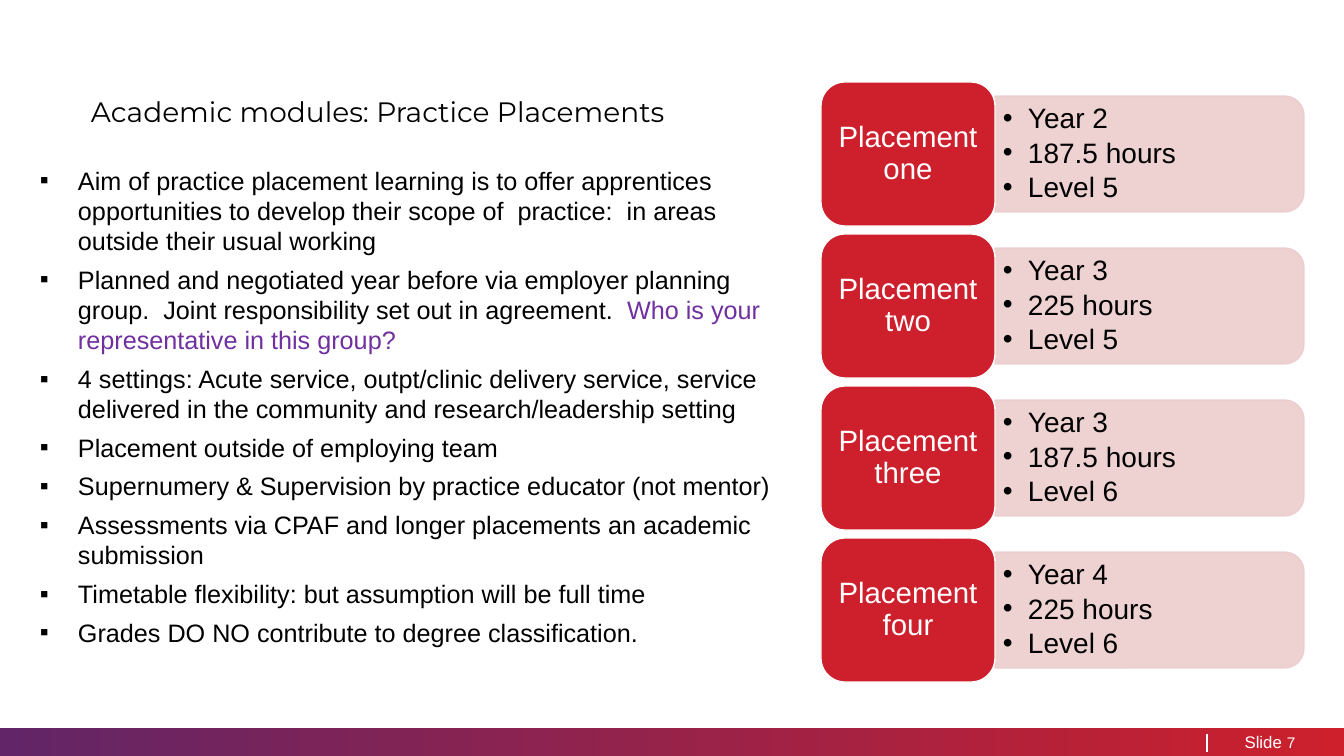
from collections import namedtuple
from dataclasses import dataclass

from lxml import etree
from pptx import Presentation
from pptx.dml.color import RGBColor
from pptx.enum.shapes import MSO_CONNECTOR, MSO_SHAPE
from pptx.enum.text import MSO_ANCHOR, MSO_AUTO_SIZE, PP_ALIGN
from pptx.oxml.ns import qn
from pptx.util import Pt

EMU_PER_PX = 914400 / 100.8
TITLE_ONLY = 5
STRAIGHT = MSO_CONNECTOR.STRAIGHT
RECTANGLE = MSO_SHAPE.RECTANGLE
ROUNDED = MSO_SHAPE.ROUNDED_RECTANGLE
ROUNDED_TOP = MSO_SHAPE.ROUND_2_SAME_RECTANGLE
TOP, MIDDLE = MSO_ANCHOR.TOP, MSO_ANCHOR.MIDDLE
LEFT, CENTER, RIGHT = PP_ALIGN.LEFT, PP_ALIGN.CENTER, PP_ALIGN.RIGHT
NO_AUTOFIT = MSO_AUTO_SIZE.NONE

Box = namedtuple("Box", "left top width height")


@dataclass(frozen=True)
class Theme:
    """Colours, fonts and type sizes of the slide."""
    purple: str = "622567"
    red: str = "CD202C"
    pink: str = "EDCDCD"
    question: str = "7030A0"
    black: str = "000000"
    white: str = "FFFFFF"
    title_font: str = "Montserrat"
    font: str = "Arial"
    title_size: int = 20
    body_size: int = 18
    detail_size: int = 20
    card_size: int = 21
    footer_size: int = 12
    number_size: int = 11


THEME = Theme()
TITLE = "Academic modules: Practice Placements"
POINTS = [
    ["Aim of practice placement learning is to offer apprentices opportunities to develop "
     "their scope of  practice:  in areas outside their usual working"],
    ["Planned and negotiated year before via employer planning group.  Joint responsibility "
     "set out in agreement.  ", "Who is your representative in this group?"],
    ["4 settings: Acute service, outpt/clinic delivery service, service delivered in the "
     "community and research/leadership setting"],
    ["Placement outside of employing team"],
    ["Supernumery & Supervision by practice educator (not mentor)"],
    ["Assessments via CPAF and longer placements an academic submission"],
    ["Timetable flexibility: but assumption will be full time"],
    ["Grades DO NO contribute to degree classification."],
]
PLACEMENTS = [
    ("Placement one", ["Year 2", "187.5 hours", "Level 5"]),
    ("Placement two", ["Year 3", "225 hours", "Level 5"]),
    ("Placement three", ["Year 3", "187.5 hours", "Level 6"]),
    ("Placement four", ["Year 4", "225 hours", "Level 6"]),
]


def px(length):
    """Turn pixels into EMU."""
    return round(length * EMU_PER_PX)


def emu(box):
    """Turn a pixel box into EMU lengths."""
    return [px(length) for length in box]


def apply(target, values):
    """Set attributes of an object from a dict."""
    for name, value in values.items():
        setattr(target, name, value)


def format_frame(frame, anchor=TOP, across=0, down=0):
    """Set wrapping, anchor and pixel margins of a text frame."""
    apply(frame, {"word_wrap": True, "auto_size": NO_AUTOFIT, "vertical_anchor": anchor,
                  "margin_left": px(across), "margin_right": px(across),
                  "margin_top": px(down), "margin_bottom": px(down)})


def add_run(paragraph, text, size, color, font=THEME.font):
    """Add one formatted run to a paragraph."""
    run = paragraph.add_run()
    run.text = text
    apply(run.font, {"size": Pt(size), "name": font, "bold": False})
    run.font.color.rgb = RGBColor.from_string(color)


def add_bullet(paragraph, character, indent):
    """Give a paragraph a hanging bullet."""
    properties = paragraph._p.get_or_add_pPr()
    properties.set("marL", str(px(indent)))
    properties.set("indent", str(-px(indent)))
    etree.SubElement(properties, qn("a:buFont")).set("typeface", THEME.font)
    etree.SubElement(properties, qn("a:buChar")).set("char", character)


def add_bullet_list(slide, box, items, character, indent, size, spacing, **frame_format):
    """Add a bulleted text box; the second run of an item takes the question colour."""
    frame = slide.shapes.add_textbox(*emu(box)).text_frame
    format_frame(frame, **frame_format)
    for index, runs in enumerate(items):
        paragraph = frame.add_paragraph() if index else frame.paragraphs[0]
        add_bullet(paragraph, character, indent)
        apply(paragraph, spacing)
        for text, color in zip(runs, (THEME.black, THEME.question)):
            add_run(paragraph, text, size, color)


def add_plain_shape(slide, kind, box, fill, line=None):
    """Add a shadowless shape with a solid fill and an optional thin line."""
    shape = slide.shapes.add_shape(kind, *emu(box))
    shape.shadow.inherit = False
    shape.fill.solid()
    shape.fill.fore_color.rgb = RGBColor.from_string(fill)
    if line:
        shape.line.color.rgb = RGBColor.from_string(line)
        shape.line.width = Pt(1)
    else:
        shape.line.fill.background()
    return shape


def add_title(slide, box):
    """Place and format the title placeholder."""
    title = slide.shapes.title
    apply(title, dict(zip(box._fields, emu(box))))
    format_frame(title.text_frame)
    paragraph = title.text_frame.paragraphs[0]
    apply(paragraph, {"alignment": LEFT, "line_spacing": 1.1})
    add_run(paragraph, TITLE, THEME.title_size, THEME.black, THEME.title_font)


def add_placement(slide, box, name, details):
    """Add one row: a pink detail panel beside a red name card."""
    card_width, panel_height, inset = 174, 116, 6
    panel_width = box.width - card_width
    panel_left = box.left + card_width
    middle = box.top + box.height / 2
    panel = add_plain_shape(
        slide, ROUNDED_TOP,
        Box(panel_left + (panel_width - panel_height) / 2, middle - panel_width / 2,
            panel_height, panel_width), THEME.pink, THEME.pink)
    panel.rotation = 90
    for color in panel._element.spPr.iter(qn("a:srgbClr")):
        etree.SubElement(color, qn("a:alpha")).set("val", "90000")

    text_box = Box(panel_left, middle - panel_height / 2 + 5, panel_width - 6, panel_height - 10)
    add_bullet_list(slide, text_box, [[detail] for detail in details], "•", 25,
                    THEME.detail_size, {"line_spacing": 0.9, "space_after": Pt(3)},
                    anchor=MIDDLE, across=8, down=4)

    card = add_plain_shape(slide, ROUNDED, Box(box.left, box.top, card_width, box.height),
                           THEME.red, THEME.white)
    format_frame(card.text_frame, MIDDLE, inset, inset)
    paragraph = card.text_frame.paragraphs[0]
    apply(paragraph, {"alignment": CENTER, "line_spacing": 0.9})
    add_run(paragraph, name, THEME.card_size, THEME.white)


def add_placements(slide, box, row_height):
    """Stack the placement rows evenly in a box."""
    pitch = (box.height - row_height) / (len(PLACEMENTS) - 1)
    for index, (name, details) in enumerate(PLACEMENTS):
        row = Box(box.left, box.top + index * pitch, box.width, row_height)
        add_placement(slide, row, name, details)


def add_footer(slide, box):
    """Add the gradient bar with its divider and slide number."""
    bar = add_plain_shape(slide, RECTANGLE, box, THEME.red)
    bar.fill.gradient()
    bar.fill.gradient_angle = 0
    for stop, color in zip(bar.fill.gradient_stops, (THEME.purple, THEME.red)):
        stop.color.rgb = RGBColor.from_string(color)

    right = box.left + box.width
    divider = slide.shapes.add_connector(
        STRAIGHT, px(right - 137), px(box.top + 6), px(right - 137), px(box.top + 24))
    divider.line.color.rgb = RGBColor.from_string(THEME.white)
    divider.line.width = Pt(1)
    etree.SubElement(divider._element.spPr, qn("a:effectLst"))

    for text, offset, width, size, alignment in (
            ("Slide", 112, 50, THEME.footer_size, RIGHT),
            ("7", 57, 33, THEME.number_size, LEFT)):
        label = slide.shapes.add_textbox(*emu(Box(right - offset, box.top, width, box.height)))
        format_frame(label.text_frame, MIDDLE)
        paragraph = label.text_frame.paragraphs[0]
        paragraph.alignment = alignment
        add_run(paragraph, text, size, THEME.white)


def main():
    """Build and save the presentation."""
    presentation = Presentation()
    apply(presentation, {"slide_width": px(1344), "slide_height": px(756)})
    slide = presentation.slides.add_slide(presentation.slide_layouts[TITLE_ONLY])
    add_footer(slide, Box(0, 728, 1344, 28))
    add_title(slide, Box(91, 91, 664, 50))
    add_bullet_list(slide, Box(40, 165, 763, 531), POINTS, "▪", 38, THEME.body_size,
                    {"line_spacing": 1.0, "space_after": Pt(6)})
    add_placements(slide, Box(821, 82, 483, 600), 144)
    presentation.save("out.pptx")


if __name__ == "__main__":
    main()
